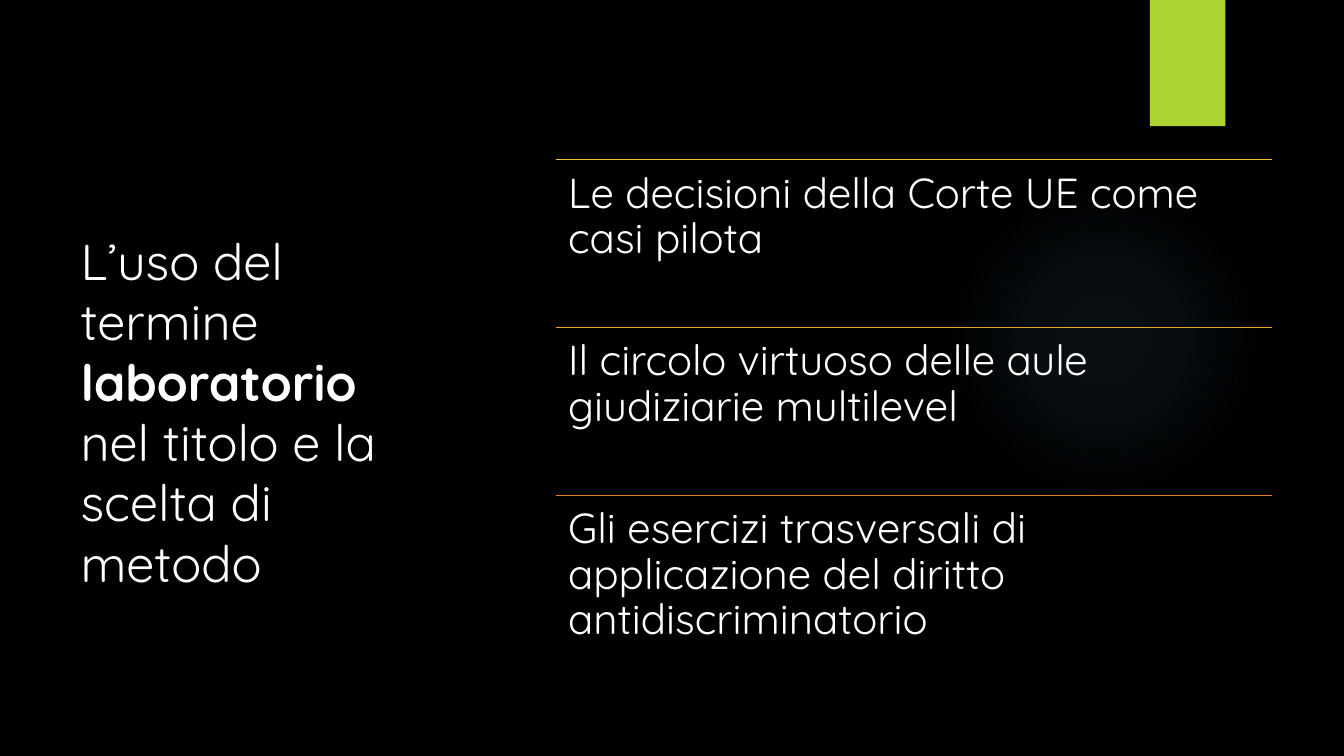
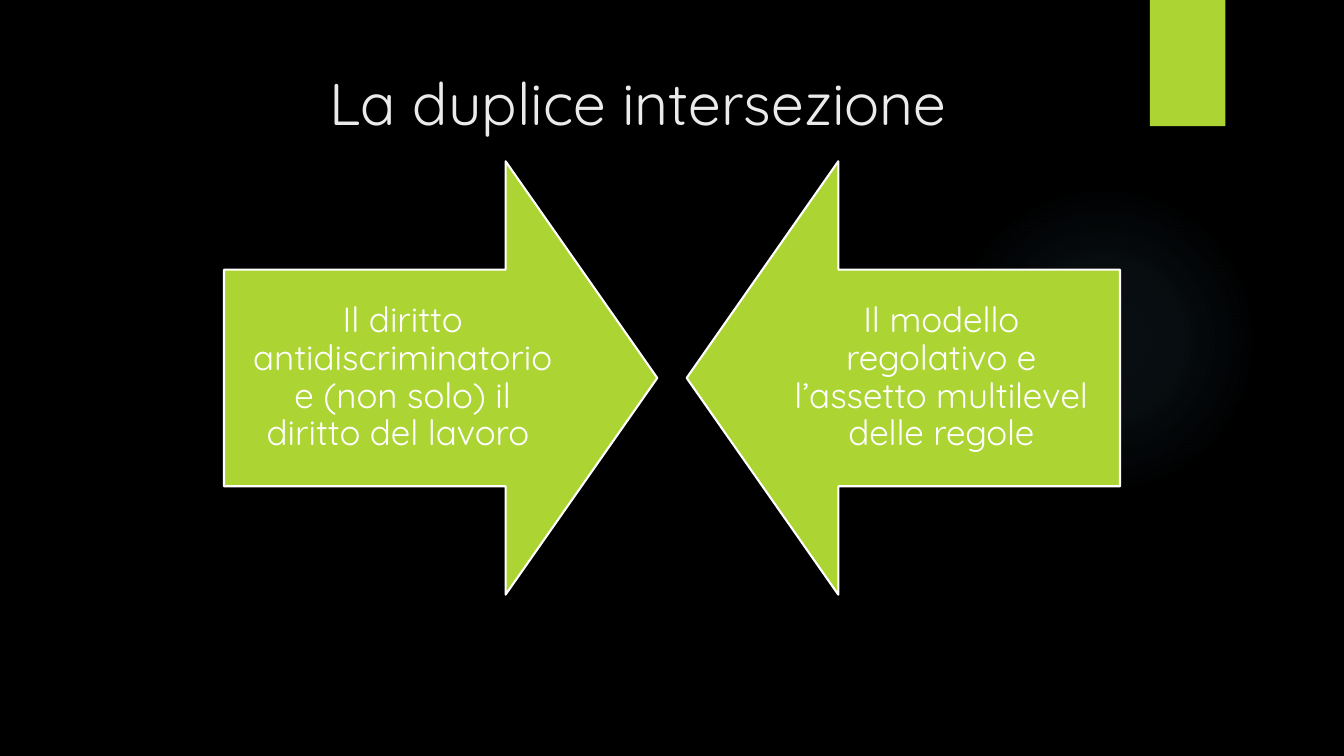
"""Build two dark slides: a ruled list of methods and a pair of facing arrows."""
from dataclasses import dataclass

from lxml.etree import SubElement
from pptx import Presentation
from pptx.dml.color import RGBColor
from pptx.enum.shapes import MSO_CONNECTOR, MSO_SHAPE
from pptx.enum.text import MSO_ANCHOR, PP_ALIGN
from pptx.oxml import parse_xml
from pptx.oxml.ns import nsdecls, qn
from pptx.util import Cm, Pt


@dataclass(frozen=True)
class Theme:
    """Colours, font and type sizes of the deck."""
    font: str = "Quicksand"
    black: str = "000000"
    white: str = "FFFFFF"
    pale: str = "EBEBEB"
    lime: str = "ACD433"
    glow: str = "7AC4F0"
    title: int = 42
    side: int = 36
    item: int = 30
    label: int = 25


THEME = Theme()
WIDE, HIGH = 33.87, 19.05
GLOW = [(0, 7), (36, 6), (69, 0), (100, 0)]

TOPIC = [("L’uso del termine ", False), ("laboratorio", True),
         (" nel titolo e la scelta di metodo", False)]
ITEMS = [
    ("Le decisioni della Corte UE come casi pilota", "E6C133"),
    ("Il circolo virtuoso delle aule giudiziarie multilevel", "EAA02C"),
    ("Gli esercizi trasversali di applicazione del diritto antidiscriminatorio",
     "EF7A24"),
]
TITLE = [("La duplice intersezione", False)]
ARROWS = [
    ("Il diritto antidiscriminatorio e (non solo) il diritto del lavoro ",
     MSO_SHAPE.RIGHT_ARROW),
    ("Il modello regolativo e l’assetto multilevel delle regole",
     MSO_SHAPE.LEFT_ARROW),
]


def color(code):
    """Turn a hex code into a colour."""
    return RGBColor.from_string(code)


def write(shape, runs, size, ink=THEME.white, inset=(0.25, 0.13),
          anchor=MSO_ANCHOR.TOP, align=PP_ALIGN.LEFT, space=1.0):
    """Fill a shape with one paragraph, run by run."""
    frame = shape.text_frame
    frame.word_wrap = True
    frame.vertical_anchor = anchor
    frame.margin_left = frame.margin_right = Cm(inset[0])
    frame.margin_top = frame.margin_bottom = Cm(inset[1])
    para = frame.paragraphs[0]
    para.alignment = align
    para.line_spacing = space
    for text, bold in runs:
        run = para.add_run()
        run.text = text
        font = run.font
        font.name, font.size, font.bold = THEME.font, Pt(size), bold
        font.color.rgb = color(ink)


def add_box(slide, left, top, width, height):
    """Add a text box measured in centimetres."""
    return slide.shapes.add_textbox(Cm(left), Cm(top), Cm(width), Cm(height))


def add_form(slide, kind, left, top, width, height, fill=THEME.lime):
    """Add a plain preset shape without line or shadow."""
    form = slide.shapes.add_shape(kind, Cm(left), Cm(top), Cm(width), Cm(height))
    form.shadow.inherit = False
    form.fill.solid()
    form.fill.fore_color.rgb = color(fill)
    form.line.fill.background()
    return form


def add_rule(slide, left, top, width, ink):
    """Add a thin level line."""
    rule = slide.shapes.add_connector(MSO_CONNECTOR.STRAIGHT, Cm(left), Cm(top),
                                      Cm(left + width), Cm(top))
    rule.line.color.rgb = color(ink)
    rule.line.width = Pt(0.75)
    SubElement(rule._element.spPr, qn("a:effectLst"))


def add_glow(slide):
    """Add the soft round light behind the content."""
    form = add_form(slide, MSO_SHAPE.OVAL, 23.9, 4.65, 7.82, 7.82, THEME.glow)
    stops = "".join(
        f'<a:gs pos="{pos * 1000}"><a:srgbClr val="{THEME.glow}">'
        f'<a:alpha val="{alpha * 1000}"/></a:srgbClr></a:gs>'
        for pos, alpha in GLOW)
    grad = parse_xml(
        f'<a:gradFill {nsdecls("a")}><a:gsLst>{stops}</a:gsLst>'
        '<a:path path="circle"><a:fillToRect l="50000" t="50000" r="50000" '
        'b="50000"/></a:path></a:gradFill>')
    props = form._element.spPr
    props.replace(props.find(qn("a:solidFill")), grad)


def new_slide(deck):
    """Start a slide with the shared light and tab."""
    slide = deck.slides.add_slide(deck.slide_layouts[6])
    add_glow(slide)
    add_form(slide, MSO_SHAPE.RECTANGLE, 28.98, 0, 1.9, 3.18)
    return slide


def list_slide(deck):
    """Show the topic beside its ruled list."""
    slide = new_slide(deck)
    write(add_box(slide, 1.78, 4.01, 8.64, 12.7), TOPIC, THEME.side,
          anchor=MSO_ANCHOR.MIDDLE)
    left, top, width, step = 14.02, 4.03, 18.03, 4.23
    for row, (text, ink) in enumerate(ITEMS):
        y = top + row * step
        add_rule(slide, left, y, width, ink)
        write(add_box(slide, left, y, width, step), [(text, False)],
              THEME.item, inset=(0.3, 0.3), space=0.9)


def arrow_slide(deck):
    """Show two arrows that point at each other."""
    slide = new_slide(deck)
    write(add_box(slide, 8.05, 1.55, 23.93, 3.58), TITLE, THEME.title,
          THEME.pale)
    side, gap = 10.92, 0.74
    left = (WIDE - 2 * side - gap) / 2
    top = (HIGH - side) / 2
    for col, (text, kind) in enumerate(ARROWS):
        arrow = add_form(slide, kind, left + col * (side + gap), top, side, side)
        arrow.adjustments[0], arrow.adjustments[1] = 0.5, 0.35
        arrow.line.color.rgb = color(THEME.white)
        arrow.line.width = Pt(1.5)
        write(arrow, [(text, False)], THEME.label, inset=(0.48, 0.48),
              anchor=MSO_ANCHOR.MIDDLE, align=PP_ALIGN.CENTER, space=0.9)


def main():
    """Build and save the deck."""
    deck = Presentation()
    deck.slide_width, deck.slide_height = Cm(WIDE), Cm(HIGH)
    back = deck.slide_master.background.fill
    back.solid()
    back.fore_color.rgb = color(THEME.black)
    list_slide(deck)
    arrow_slide(deck)
    deck.save("out.pptx")


if __name__ == "__main__":
    main()
